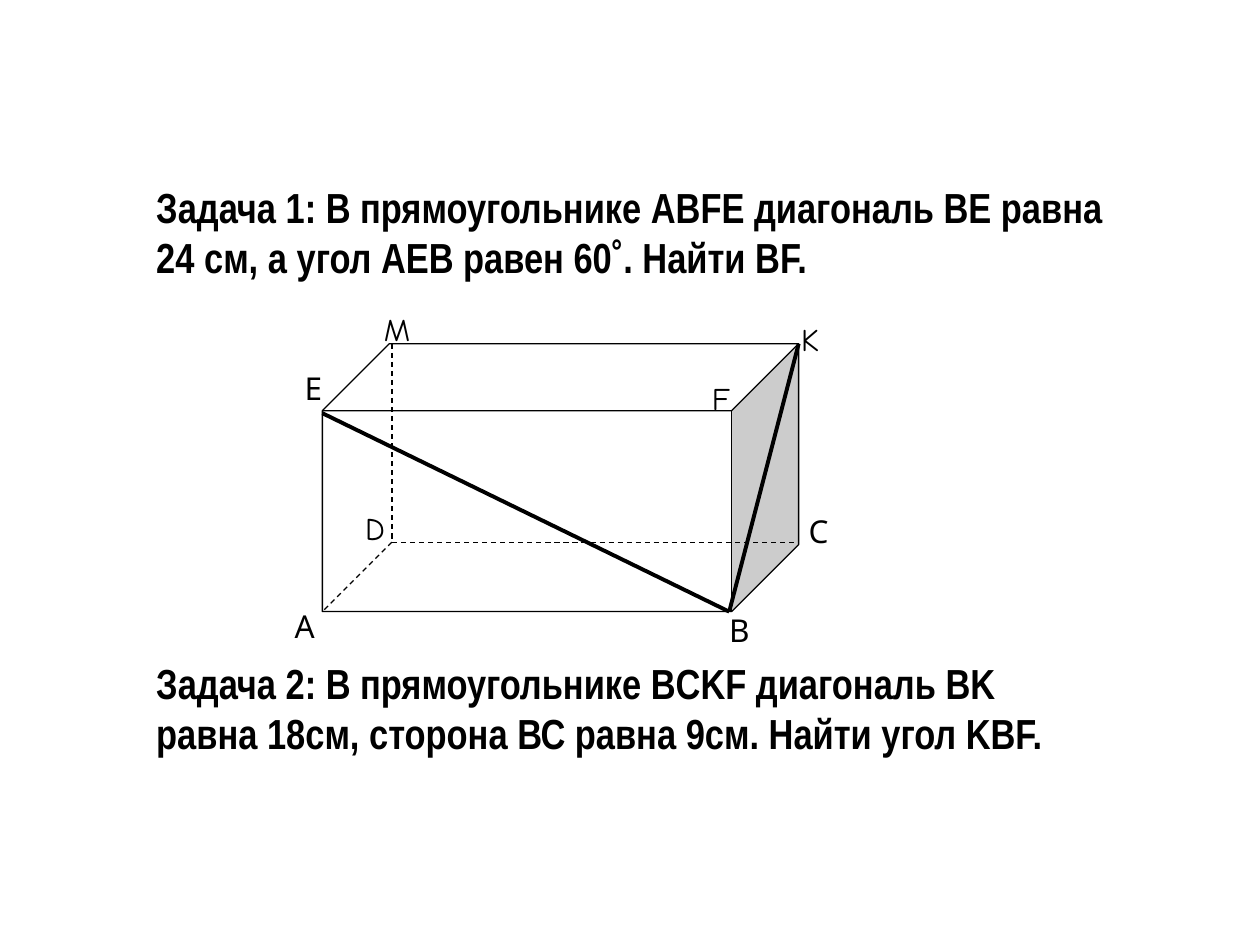
from lxml import etree
from pptx import Presentation
from pptx.dml.color import RGBColor
from pptx.enum.dml import MSO_LINE
from pptx.enum.shapes import MSO_CONNECTOR, MSO_SHAPE
from pptx.enum.text import MSO_AUTO_SIZE
from pptx.oxml.ns import qn
from pptx.util import Cm, Pt

STRAIGHT = MSO_CONNECTOR.STRAIGHT
DASH = MSO_LINE.DASH
FIT_SHAPE = MSO_AUTO_SIZE.SHAPE_TO_FIT_TEXT
BLACK, WHITE = "000000", "FFFFFF"

# Text, left, top, width, height in cm
TASKS = [
    ("Задача 1: В прямоугольнике ABFE диагональ BE равна 24 см, "
     "а угол AEB равен 60˚. Найти BF.", 2.9, 3.53, 19.81, 2.31),
    ("Задача 2: В прямоугольнике ВCKF диагональ ВK равна 18см, "
     "сторона ВС равна 9см. Найти угол KВF.", 2.9, 13.13, 19, 3.51),
]
# Letter, left, top, width in cm, wrap
LABELS = [
    ("А", 5.69, 12.12, 0.97, False),
    ("В", 14.45, 12.19, 0.91, False),
    ("С", 16.05, 10.19, 0.89, False),
    ("D", 7.11, 10.13, 0.97, False),
    ("Е", 5.89, 7.32, 0.91, False),
    ("F", 14.1, 7.52, 1.4, True),
    ("K", 15.9, 6.32, 0.81, True),
    ("M", 7.49, 6.12, 1.07, False),
]
LABEL_HEIGHT = 1.02

# Box ABCDEFKM in cm
LEFT, TOP, WIDTH, HEIGHT, DEPTH = 6.5, 6.93, 9.6, 5.4, 1.4
RIGHT, BOTTOM = LEFT + WIDTH, TOP + HEIGHT
VERTICES = {
    "A": (LEFT, BOTTOM),
    "B": (RIGHT - DEPTH, BOTTOM),
    "D": (LEFT + DEPTH, BOTTOM - DEPTH),
    "C": (RIGHT, BOTTOM - DEPTH),
    "E": (LEFT, TOP + DEPTH),
    "M": (LEFT + DEPTH, TOP),
    "K": (RIGHT, TOP),
}
HIDDEN_EDGES = ["MD", "DC", "DA"]
DIAGONALS = ["EB", "KB"]


def color(value):
    return RGBColor.from_string(value)


def add_text(slide, text, left, top, width, height, font, size,
             bold=False, wrap=True):
    box = slide.shapes.add_textbox(Cm(left), Cm(top), Cm(width), Cm(height))
    frame = box.text_frame
    frame.word_wrap = wrap
    frame.auto_size = FIT_SHAPE
    paragraph = frame.paragraphs[0]
    paragraph.text = text
    paragraph.font.name = font
    paragraph.font.size = Pt(size)
    paragraph.font.bold = bold
    paragraph.font.color.rgb = color(BLACK)


def add_segment(slide, ends, width, dash=None):
    """Join two vertices, named by their letters, with a line."""
    points = [Cm(value) for letter in ends for value in VERTICES[letter]]
    line = slide.shapes.add_connector(STRAIGHT, *points)
    line.line.color.rgb = color(BLACK)
    line.line.width = Pt(width)
    if dash:
        line.line.dash_style = dash
    etree.SubElement(line._element.spPr, qn("a:effectLst"))


def add_cube(slide):
    cube = slide.shapes.add_shape(
        MSO_SHAPE.CUBE, Cm(LEFT), Cm(TOP), Cm(WIDTH), Cm(HEIGHT))
    cube.adjustments[0] = 0.25
    cube.shadow.inherit = False
    cube.fill.solid()
    cube.fill.fore_color.rgb = color(WHITE)
    cube.line.color.rgb = color(BLACK)
    cube.line.width = Pt(0.75)


def main():
    presentation = Presentation()
    presentation.slide_width = Cm(25.4)
    presentation.slide_height = Cm(19.05)
    slide = presentation.slides.add_slide(presentation.slide_layouts[6])

    add_cube(slide)
    for edge in HIDDEN_EDGES:
        add_segment(slide, edge, 0.75, DASH)
    for diagonal in DIAGONALS:
        add_segment(slide, diagonal, 2.25)
    for letter, left, top, width, wrap in LABELS:
        add_text(slide, letter, left, top, width, LABEL_HEIGHT,
                 "Comic Neue", 18, wrap=wrap)
    for task, left, top, width, height in TASKS:
        add_text(slide, task, left, top, width, height,
                 "Arial Narrow", 24, bold=True)

    presentation.save("out.pptx")


if __name__ == "__main__":
    main()
